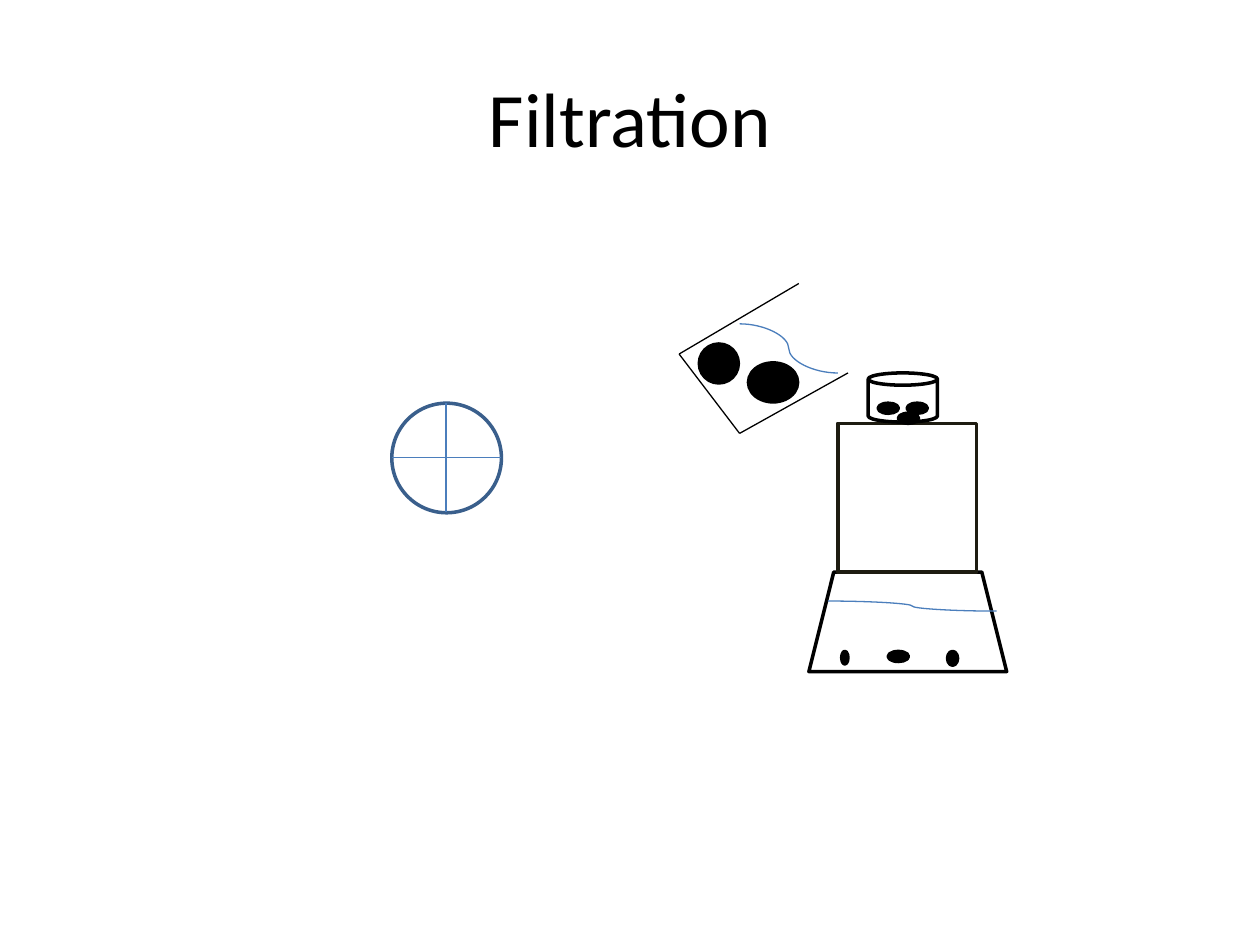
"""Build a slide with a simple diagram of filtration."""
from lxml.etree import SubElement
from pptx import Presentation
from pptx.dml.color import RGBColor
from pptx.enum.shapes import MSO_CONNECTOR, MSO_SHAPE
from pptx.enum.text import MSO_ANCHOR, PP_ALIGN
from pptx.oxml.ns import qn
from pptx.util import Inches, Pt

BLACK = RGBColor(0x00, 0x00, 0x00)
WHITE = RGBColor(0xFF, 0xFF, 0xFF)
DARK = RGBColor(0x1E, 0x1C, 0x11)
WATER = RGBColor(0x4B, 0x7E, 0xBC)
FILTER = RGBColor(0x3A, 0x5F, 0x8C)

presentation = Presentation()
presentation.slide_width = Inches(10)
presentation.slide_height = Inches(7.5)
slide = presentation.slides.add_slide(presentation.slide_layouts[6])


def add_part(kind, left, top, width, height, outline, fill=None):
    part = slide.shapes.add_shape(
        kind, Inches(left), Inches(top), Inches(width), Inches(height))
    part.shadow.inherit = False
    if fill is None:
        part.fill.background()
    else:
        part.fill.solid()
        part.fill.fore_color.rgb = fill
    part.line.color.rgb = outline
    part.line.width = Pt(2)


def add_stroke(kind, start, end, color):
    stroke = slide.shapes.add_connector(
        kind, *(Inches(value) for value in (*start, *end)))
    stroke.line.color.rgb = color
    stroke.line.width = Pt(0.75)
    SubElement(stroke._element.spPr, qn("a:effectLst"))


heading = slide.shapes.add_textbox(Inches(0.5), Inches(0.3), Inches(9), Inches(1.25))
heading.text_frame.word_wrap = True
heading.text_frame.vertical_anchor = MSO_ANCHOR.MIDDLE
title = heading.text_frame.paragraphs[0]
title.text = "Filtration"
title.alignment = PP_ALIGN.CENTER
title.font.name = "Calibri"
title.font.size = Pt(44)
title.font.color.rgb = BLACK

add_part(MSO_SHAPE.TRAPEZOID, 6.42, 4.54, 1.57, 0.79, BLACK)
add_part(MSO_SHAPE.RECTANGLE, 6.65, 3.36, 1.1, 1.18, DARK)

beaker = [(6.34, 2.25), (5.39, 2.81), (5.87, 3.44), (6.73, 2.96)]
for start, end in zip(beaker, beaker[1:]):
    add_stroke(MSO_CONNECTOR.STRAIGHT, start, end, BLACK)

add_part(MSO_SHAPE.CAN, 6.89, 2.96, 0.55, 0.39, BLACK, WHITE)

particles = [
    (6.97, 3.2, 0.16, 0.08), (7.2, 3.2, 0.16, 0.08), (7.13, 3.28, 0.16, 0.08),
    (6.68, 5.17, 0.05, 0.1), (7.05, 5.17, 0.16, 0.08), (7.52, 5.17, 0.08, 0.11),
    (5.55, 2.73, 0.31, 0.31), (5.94, 2.88, 0.39, 0.31),
]
for particle in particles:
    add_part(MSO_SHAPE.FLOWCHART_CONNECTOR, *particle, BLACK, BLACK)

for start, end in [((6.57, 4.77), (7.91, 4.85)), ((5.87, 2.57), (6.65, 2.96))]:
    add_stroke(MSO_CONNECTOR.CURVE, start, end, WATER)

add_part(MSO_SHAPE.FLOWCHART_CONNECTOR, 3.11, 3.2, 0.87, 0.87, FILTER)
for start, end in [((3.11, 3.63), (3.98, 3.63)), ((3.54, 3.2), (3.54, 4.06))]:
    add_stroke(MSO_CONNECTOR.STRAIGHT, start, end, WATER)

presentation.save("out.pptx")
